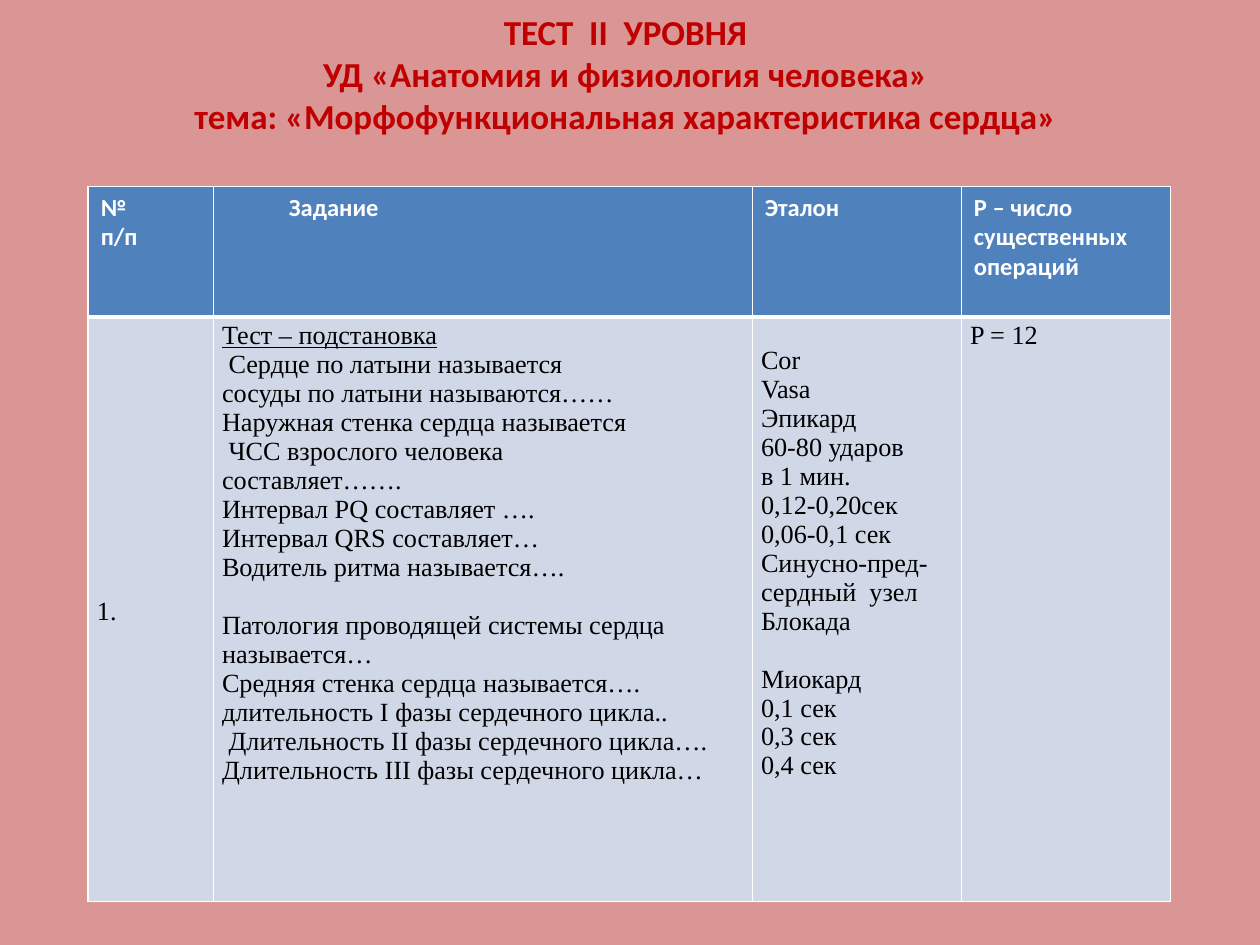
from pptx import Presentation
from pptx.dml.color import RGBColor
from pptx.enum.text import MSO_ANCHOR as Anchor, PP_ALIGN as Align
from pptx.oxml import parse_xml
from pptx.oxml.ns import nsdecls
from pptx.util import Pt


def color(value):
    return RGBColor.from_string(value)


def style_cell(cell, fill, top, bottom):
    """Fill a cell and draw its white borders; top and bottom are line widths."""
    properties = cell._tc.get_or_add_tcPr()
    for side, width in (("L", 1), ("R", 1), ("T", top), ("B", bottom)):
        properties.append(parse_xml(
            f'<a:ln{side} {nsdecls("a")} w="{Pt(width)}"><a:solidFill>'
            f'<a:srgbClr val="FFFFFF"/></a:solidFill></a:ln{side}>'))
    cell.fill.solid()
    cell.fill.fore_color.rgb = color(fill)


LINE = 16.6
HEADERS = ["№\nп/п", "Задание", "Эталон", "Р – число существенных операций"]
TASKS = [
    "Тест – подстановка",
    " Сердце по латыни называется",
    "сосуды по латыни называются……",
    "Наружная стенка сердца называется",
    " ЧСС взрослого человека",
    "составляет…….",
    "Интервал PQ составляет ….",
    "Интервал QRS составляет…",
    "Водитель ритма называется….",
    "Патология проводящей системы сердца называется…",
    "Средняя стенка сердца называется….",
    "длительность I фазы сердечного цикла..",
    " Длительность II фазы сердечного цикла….",
    "Длительность III фазы сердечного цикла…",
]
ANSWERS = [
    "Cor", "Vasa", "Эпикард", "60-80 ударов", "в 1 мин.", "0,12-0,20сек",
    "0,06-0,1 сек", "Синусно-пред-сердный  узел", "Блокада", "Миокард",
    "0,1 сек", "0,3 сек", "0,4 сек",
]

deck = Presentation()
deck.slide_width, deck.slide_height = Pt(720), Pt(540)
slide = deck.slides.add_slide(deck.slide_layouts[6])
slide.background.fill.solid()
slide.background.fill.fore_color.rgb = color("D99694")

# Title
title = slide.shapes.add_textbox(Pt(33.5), Pt(0), Pt(648), Pt(106.5)).text_frame
title.word_wrap = True
title.margin_top = Pt(6)
para = title.paragraphs[0]
para.text = ("ТЕСТ  II  УРОВНЯ\vУД «Анатомия и физиология человека»\v"
             "тема: «Морфофункциональная характеристика сердца»")
para.alignment = Align.CENTER
para.font.name, para.font.size, para.font.bold = "Calibri", Pt(20), True
para.font.color.rgb = color("C00000")

# Table
table = slide.shapes.add_table(2, 4, Pt(50.4), Pt(106.6), Pt(618.5), Pt(408.5)).table
table.first_row = table.horz_banding = False
for column, width in zip(table.columns, (71.5, 308, 119.5, 119.5)):
    column.width = Pt(width)
for row, height in zip(table.rows, (74.5, 334)):
    row.height = Pt(height)

for cell, text in zip(table.rows[0].cells, HEADERS):
    style_cell(cell, "4F81BD", 1, 3)
    cell.text = text
    for para in cell.text_frame.paragraphs:
        para.font.name, para.font.size, para.font.bold = "Calibri", Pt(14), True
        para.font.color.rgb = color("FFFFFF")
task_header = table.cell(0, 1).text_frame.paragraphs[0]
task_header.level = 1
task_header._p.get_or_add_pPr().set("marL", str(Pt(36)))

for cell, lines in zip(table.rows[1].cells, (["1."], TASKS, ANSWERS, ["P = 12"])):
    style_cell(cell, "D0D8E8", 3, 1)
    cell.margin_left = cell.margin_right = Pt(5)
    cell.margin_top = cell.margin_bottom = Pt(0)
    cell.text = "\n".join(lines)
    for para in cell.text_frame.paragraphs:
        para.font.name, para.font.size, para.font.bold = "Times New Roman", Pt(15), False
        para.font.color.rgb = color("000000")

number, tasks, answers, operations = table.rows[1].cells
number.vertical_anchor = Anchor.MIDDLE
for cell in (number, tasks, operations):
    cell.text_frame.paragraphs[0].line_spacing = 1.15
for cell in (answers, operations):
    for para in cell.text_frame.paragraphs:
        para.alignment = Align.JUSTIFY
answers.margin_top = Pt(LINE)
tasks.text_frame.paragraphs[0].runs[0].font.underline = True
for cell in (tasks, answers):
    cell.text_frame.paragraphs[9].space_before = Pt(LINE)

deck.save("out.pptx")
